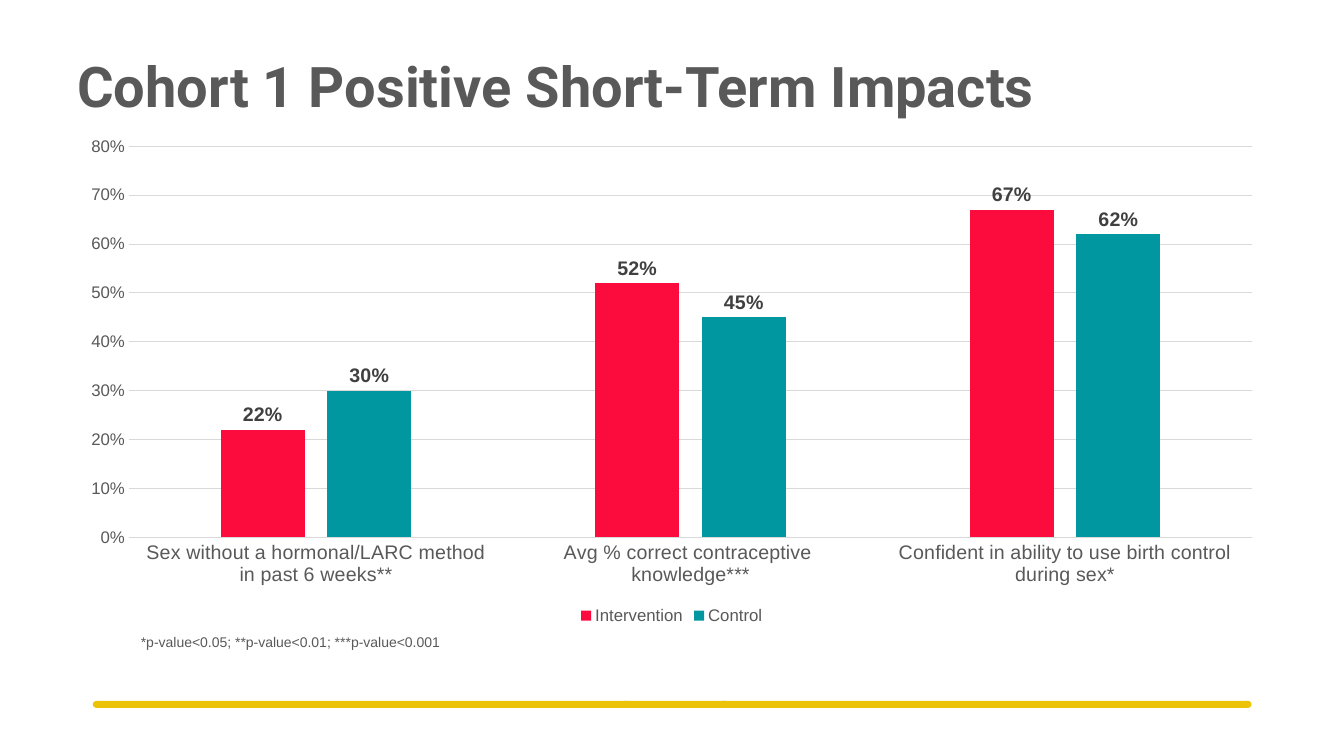
from pptx import Presentation
from pptx.chart.data import CategoryChartData
from pptx.dml.color import RGBColor
from pptx.enum.chart import XL_CHART_TYPE, XL_LABEL_POSITION as LABEL_POS
from pptx.enum.chart import XL_LEGEND_POSITION as LEGEND_POS, XL_TICK_MARK as TICK
from pptx.enum.shapes import MSO_SHAPE
from pptx.enum.text import MSO_ANCHOR, PP_ALIGN
from pptx.util import Cm, Pt

GREY, PALE, DARK = "595959", "D9D9D9", "404040"
RED, TEAL, YELLOW, WHITE = "FC0B3D", "0197A1", "EDC308", "FFFFFF"
SERIES = [
    ("Intervention", (0.22, 0.52, 0.67), RED),
    ("Control", (0.30, 0.45, 0.62), TEAL),
]
RULE_TOP, RULE_HEIGHT, DOT_WIDTH = 17.66, 0.18, 0.2
RECT, OVAL = MSO_SHAPE.RECTANGLE, MSO_SHAPE.OVAL
FOOTER = [
    (RECT, 15.8, 16.56, 2.41, 2.49, WHITE),
    (OVAL, 18.14, RULE_TOP, DOT_WIDTH, RULE_HEIGHT, TEAL),
    (OVAL, 15.67, RULE_TOP, DOT_WIDTH, RULE_HEIGHT, TEAL),
    (RECT, 2.44, RULE_TOP, 29.01, RULE_HEIGHT, YELLOW),
    (OVAL, 31.34, RULE_TOP, DOT_WIDTH, RULE_HEIGHT, YELLOW),
    (OVAL, 2.34, RULE_TOP, DOT_WIDTH, RULE_HEIGHT, YELLOW),
]


def rgb(value):
    return RGBColor.from_string(value)


def set_font(font, size, color=GREY, bold=False, name="Arial"):
    font.name, font.size, font.bold = name, Pt(size), bold
    font.color.rgb = rgb(color)


prs = Presentation()
prs.slide_width, prs.slide_height = Cm(33.87), Cm(19.05)
s = prs.slides.add_slide(prs.slide_layouts[5])

title = s.shapes.title
title.left, title.top, title.width, title.height = Cm(1.69), Cm(1.17), Cm(30.48), Cm(2.69)
tf = title.text_frame
tf.text = "Cohort 1 Positive Short-Term Impacts"
tf.vertical_anchor = MSO_ANCHOR.TOP
p = tf.paragraphs[0]
p.alignment = PP_ALIGN.LEFT
set_font(p.font, 40, bold=True, name="Roboto")

for kind, left, top, width, height, color in FOOTER:
    sp = s.shapes.add_shape(kind, Cm(left), Cm(top), Cm(width), Cm(height))
    sp.shadow.inherit = False
    sp.fill.solid()
    sp.fill.fore_color.rgb = rgb(color)
    sp.line.fill.background()

data = CategoryChartData(number_format="0%")
data.categories = [
    "Sex without a hormonal/LARC method in past 6 weeks**",
    "Avg % correct contraceptive \nknowledge***",
    "Confident in ability to use birth control during sex*",
]
for name, values, color in SERIES:
    data.add_series(name, values)
chart = s.shapes.add_chart(
    XL_CHART_TYPE.COLUMN_CLUSTERED, Cm(1.69), Cm(3.21), Cm(30.48), Cm(12.63), data
).chart
set_font(chart.font, 10, "000000")
chart.has_title = False
chart.has_legend = True
chart.legend.position = LEGEND_POS.BOTTOM
chart.legend.include_in_layout = False
set_font(chart.legend.font, 12)

cat_axis, val_axis = chart.category_axis, chart.value_axis
for axis, size in ((cat_axis, 14), (val_axis, 12)):
    axis.major_tick_mark = axis.minor_tick_mark = TICK.NONE
    set_font(axis.tick_labels.font, size)
val_axis.minimum_scale, val_axis.maximum_scale, val_axis.major_unit = 0, 0.8, 0.1
val_axis.tick_labels.number_format = "0%"
val_axis.tick_labels.number_format_is_linked = False
val_axis.format.line.fill.background()
for line in (cat_axis.format.line, val_axis.major_gridlines.format.line):
    line.color.rgb = rgb(PALE)
    line.width = Pt(0.75)

plot = chart.plots[0]
plot.gap_width, plot.overlap = 219, -27
plot.vary_by_categories = False
for series, (name, values, color) in zip(plot.series, SERIES):
    series.format.fill.solid()
    series.format.fill.fore_color.rgb = rgb(color)
    labels = series.data_labels
    labels.show_value = True
    labels.position = LABEL_POS.OUTSIDE_END
    labels.number_format = "0%"
    labels.number_format_is_linked = False
    set_font(labels.font, 14, DARK, bold=True)

note = s.shapes.add_textbox(Cm(3.3), Cm(15.85), Cm(10.54), Cm(0.69))
tf = note.text_frame
tf.word_wrap = True
tf.text = "*p-value<0.05; **p-value<0.01; ***p-value<0.001"
set_font(tf.paragraphs[0].font, 10)

prs.save("out.pptx")
